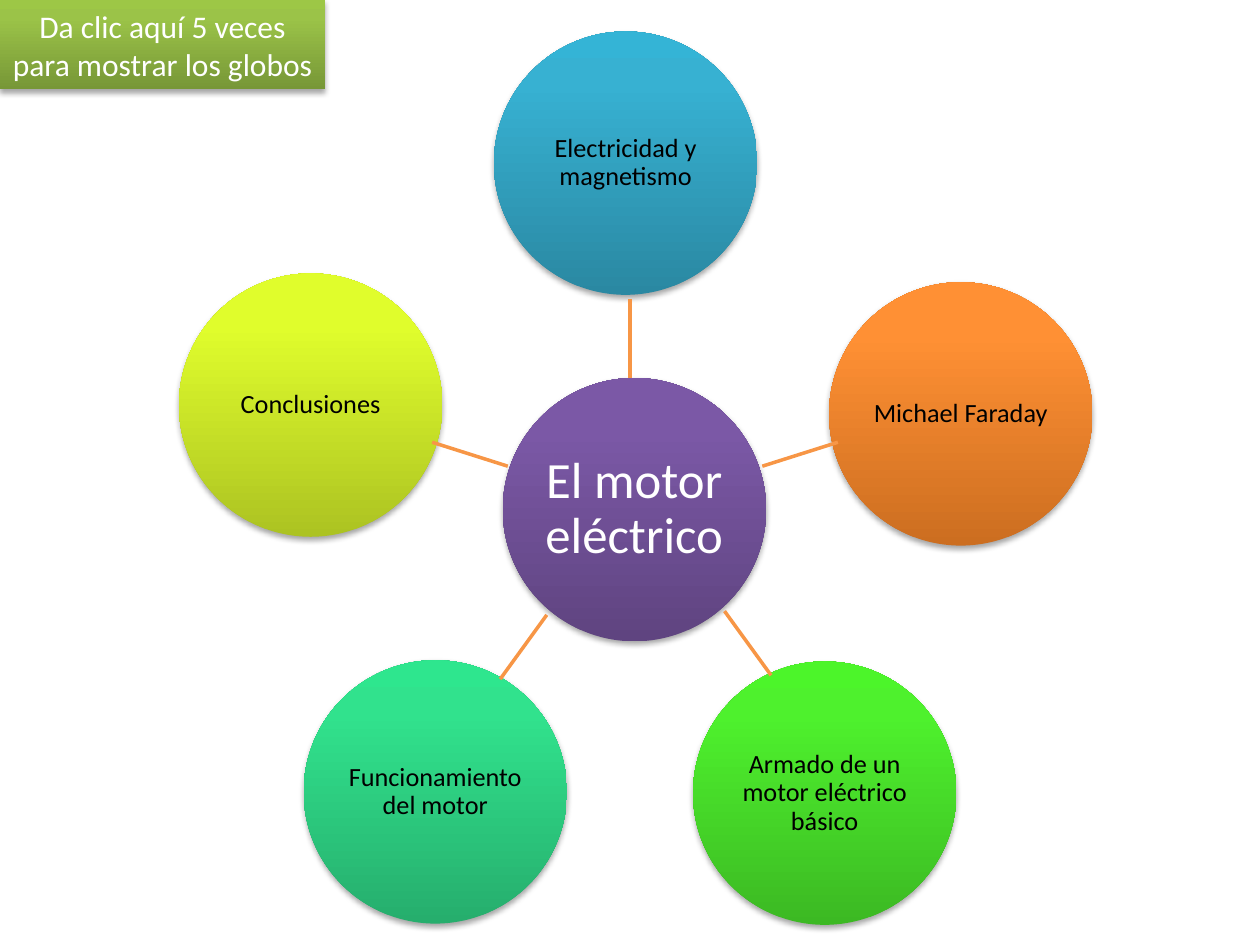
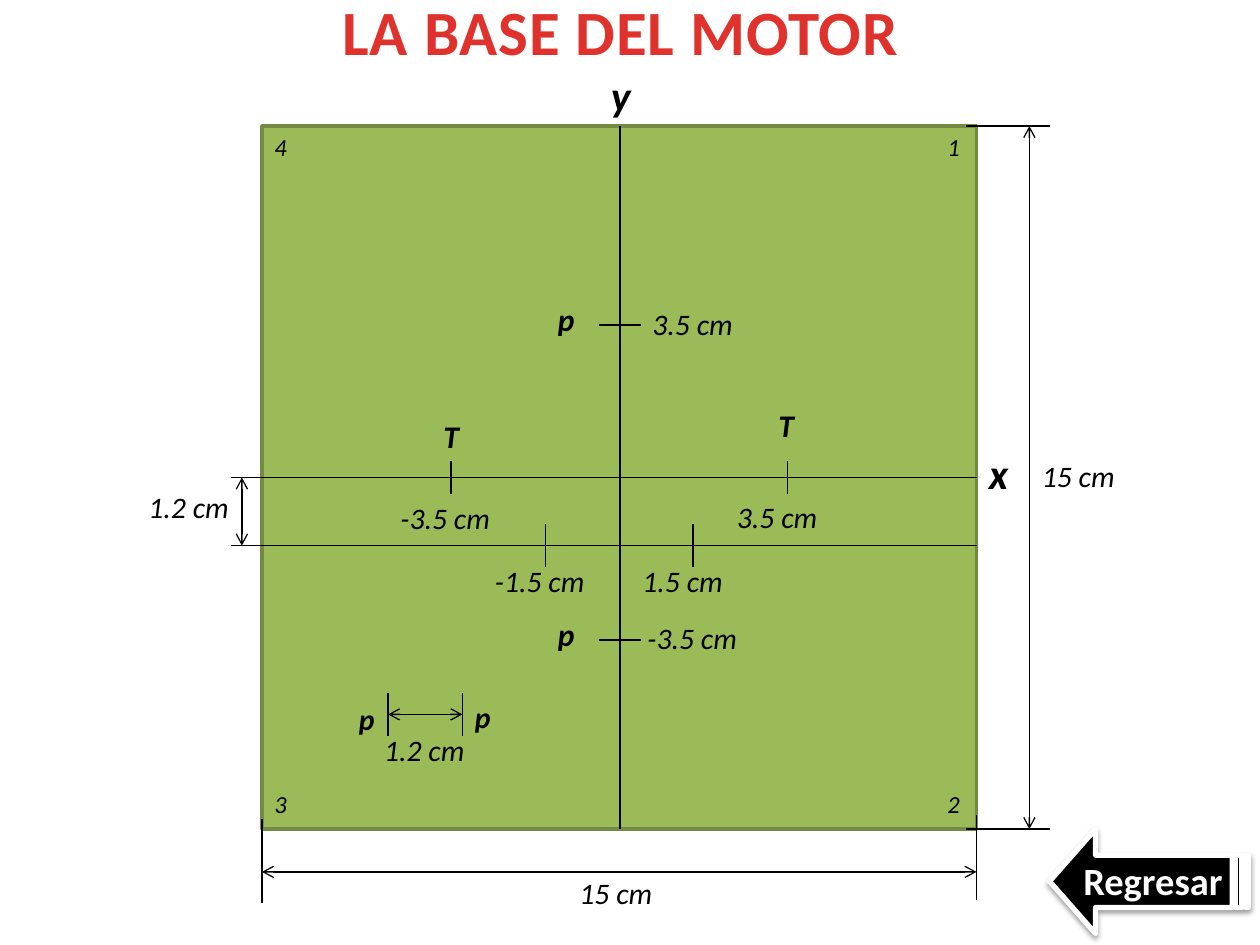
"""Build a topic map of the electric motor and a measured plan of its base."""
from typing import NamedTuple

from lxml import etree
from pptx import Presentation
from pptx import util as u
from pptx.dml import color as c
from pptx.enum import shapes, text
from pptx.oxml import ns

PX = 9144
FONT = "Calibri"
BLACK, WHITE, RED = "000000", "FFFFFF", "E0322D"
ORANGE, GREEN, OLIVE = "F79646", "9BBB59", "738A42"
DISC = 209
LEFT, TOP, RIGHT, BASE = 208, 100, 775, 658
MID, AXIS, LOWER = 492, 379, 433


class Face(NamedTuple):
    size: int
    tint: str = BLACK
    bold: bool = False
    slant: bool = False


class Globe(NamedTuple):
    words: str
    x: int
    y: int
    tones: tuple[str, str, str]
    face: Face = Face(15)


class Line(NamedTuple):
    x1: int
    y1: int
    x2: int
    y2: int
    arrow: bool = False
    tint: str = BLACK
    width: float = 0.75


class Label(NamedTuple):
    words: str
    x: int
    y: int
    w: int
    h: int
    face: Face


AXES = Face(24, bold=True, slant=True)
HOLE = Face(18, bold=True, slant=True)
SMALL = Face(17, bold=True, slant=True)
SIZE = Face(17, slant=True)
CORNER = Face(14, slant=True)

GLOBES = [
    Globe("Michael Faraday", 658, 224, ("CC6E20", "FF9034", "FF9136")),
    Globe("Electricidad y magnetismo", 392, 25, ("2A88A2", "37B1D2", "34B4D6")),
    Globe("El motor eléctrico", 399, 300, ("5F4480", "7B58A6", "7C57A8"), Face(29, WHITE)),
    Globe("Funcionamiento del motor", 241, 524, ("26AE6D", "31E28D", "2EE68E")),
    Globe("Armado de un motor eléctrico básico", 550, 525, ("3CB923", "4EF12D", "4CF52A")),
    Globe("Conclusiones", 142, 217, ("ACC322", "E0FD2C", "E2FF2B")),
]
SPOKES = [
    (500, 300, 500, 237), (403, 370, 343, 351), (605, 370, 665, 351),
    (434, 488, 397, 539), (575, 485, 612, 536),
]


def across(x: int, y: int) -> Line:
    """Return a short level tick centred on a point."""
    return Line(x - 17, y, x + 17, y)


def upright(x: int, y: int, half: int) -> Line:
    """Return a short upright tick centred on a point."""
    return Line(x, y - half, x, y + half)


LINES = [
    Line(MID, TOP, MID, BASE),
    Line(183, AXIS, RIGHT, AXIS),
    Line(183, LOWER, RIGHT, LOWER),
    *(across(MID, y) for y in (258, 508)),
    *(upright(x, AXIS, 13) for x in (358, 625)),
    *(upright(x, LOWER, 17) for x in (433, 550)),
    *(upright(x, 567, 17) for x in (308, 367)),
    Line(367, 567, 308, 567, True),
    Line(192, AXIS, 192, LOWER, True),
    Line(817, TOP, 817, BASE, True),
    *(Line(767, y, 833, y) for y in (TOP, BASE)),
    Line(RIGHT, 692, LEFT, 692, True),
    Line(LEFT, 650, LEFT, 717),
    Line(RIGHT, 647, RIGHT, 714),
]
LABELS = [
    Label("y", 475, 50, 33, 50, AXES),
    Label("x", 775, 350, 33, 50, AXES),
    *(Label(words, x, y, 33, 34, CORNER) for words, x, y in (
        ("1", 742, 100), ("4", 208, 100), ("3", 208, 621), ("2", 742, 621))),
    *(Label(words, x, y, 33, 40, HOLE) for words, x, y in (
        ("p", 433, 233), ("p", 433, 483), ("T", 342, 326), ("T", 608, 317))),
    *(Label("p", x, y, 33, 39, SMALL) for x, y in ((275, 551), (367, 550))),
    *(Label(words, x, y, 100, 39, SIZE) for words, x, y in (
        ("3.5 cm", 508, 238), ("3.5 cm", 575, 391), ("-3.5 cm", 504, 487),
        ("-3.5 cm", 308, 392), ("1.5 cm", 500, 442), ("-1.5 cm", 383, 442),
        ("1.2 cm", 108, 383), ("1.2 cm", 295, 576),
        ("15 cm", 817, 358), ("15 cm", 450, 689))),
]


def px(*lengths: int) -> list[int]:
    """Turn px lengths into EMU."""
    return [length * PX for length in lengths]


def paint(target, tint: str) -> None:
    """Give a fill one solid colour."""
    target.solid()
    target.fore_color.rgb = c.RGBColor.from_string(tint)


def add(parent, tag: str, **traits):
    """Append a DrawingML child and return it."""
    return etree.SubElement(parent, ns.qn("a:" + tag), traits)


def blend(shape, tones: tuple[str, str, str]) -> None:
    """Fill a shape with tones that run from its foot to its top."""
    props = shape._element.spPr
    grad = add(props, "gradFill", rotWithShape="1")
    stops = add(grad, "gsLst")
    for place, tone in zip((0, 80, 100), tones):
        add(add(stops, "gs", pos=str(place * 1000)), "srgbClr", val=tone)
    add(grad, "lin", ang="16200000", scaled="0")
    props.insert(2, grad)
    shape.line.fill.background()


def shade(shape, depth: int) -> None:
    """Cast a soft shadow below a shape."""
    shape.shadow.inherit = False
    effects = shape._element.spPr.find(ns.qn("a:effectLst"))
    cast = add(effects, "outerShdw", blurRad="40000", dist="23000",
               dir="5400000", rotWithShape="0")
    add(add(cast, "srgbClr", val=BLACK), "alpha", val=str(depth * 1000))


def write(shape, words: str, face: Face, align=text.PP_ALIGN.LEFT, pitch: float = 1.0) -> None:
    """Write one run of text in a shape."""
    frame = shape.text_frame
    frame.word_wrap = True
    para = frame.paragraphs[0]
    para.alignment = align
    para.line_spacing = pitch
    run = para.add_run()
    run.text = words
    font = run.font
    font.name, font.size = FONT, u.Pt(face.size)
    font.bold, font.italic = face.bold, face.slant
    paint(font.fill, face.tint)


def label(slide, item: Label, align=text.PP_ALIGN.LEFT):
    """Place a text box and return it."""
    box = slide.shapes.add_textbox(*px(item.x, item.y, item.w, item.h))
    write(box, item.words, item.face, align)
    return box


def globe(slide, item: Globe) -> None:
    """Draw a shaded disc with its topic."""
    disc = slide.shapes.add_shape(shapes.MSO_SHAPE.OVAL, *px(item.x, item.y, DISC, DISC))
    blend(disc, item.tones)
    shade(disc, 35)
    frame = disc.text_frame
    frame.margin_left = frame.margin_right = frame.margin_top = frame.margin_bottom = PX
    frame.vertical_anchor = text.MSO_ANCHOR.MIDDLE
    write(disc, item.words, item.face, text.PP_ALIGN.CENTER, 0.9)


def stroke(slide, item: Line) -> None:
    """Draw a line, with open arrows at both ends if asked."""
    link = slide.shapes.add_connector(
        shapes.MSO_CONNECTOR.STRAIGHT, *px(item.x1, item.y1, item.x2, item.y2))
    paint(link.line.fill, item.tint)
    link.line.width = u.Pt(item.width)
    if item.arrow:
        for tag in ("headEnd", "tailEnd"):
            add(link.line._get_or_add_ln(), tag, type="arrow")
    add(link._element.spPr, "effectLst")


def topics(slide) -> None:
    """Draw the map of topics."""
    for item in GLOBES:
        globe(slide, item)
    for ends in SPOKES:
        stroke(slide, Line(*ends, tint=ORANGE, width=2))
    hint = slide.shapes.add_shape(shapes.MSO_SHAPE.RECTANGLE, *px(0, 0, 258, 71))
    blend(hint, ("779737", "9BC348", "9DC746"))
    shade(hint, 35)
    write(hint, "Da clic aquí 5 veces para mostrar los globos", Face(18, WHITE),
          text.PP_ALIGN.CENTER)


def button(slide) -> None:
    """Draw the striped arrow that leads back."""
    arrow = slide.shapes.add_shape(
        shapes.MSO_SHAPE.STRIPED_RIGHT_ARROW, *px(833, 658, 158, 83))
    arrow.adjustments[0], arrow.adjustments[1] = 0.5, 0.44
    arrow._element.spPr.find(ns.qn("a:xfrm")).set("flipH", "1")
    paint(arrow.fill, BLACK)
    paint(arrow.line.fill, WHITE)
    arrow.line.width = u.Pt(3)
    shade(arrow, 38)
    label(slide, Label("Regresar", 850, 675, 133, 52, Face(22, WHITE, True)))


def plan(slide) -> None:
    """Draw the plan of the base with its sizes."""
    title = label(slide, Label("LA BASE DEL MOTOR", 259, -11, 467, 71, Face(36, RED, True)),
                  text.PP_ALIGN.CENTER)
    title.text_frame.word_wrap = False
    title.text_frame.paragraphs[0].runs[0].font._element.set("spc", "50")
    board = slide.shapes.add_shape(
        shapes.MSO_SHAPE.RECTANGLE, *px(LEFT, TOP, RIGHT - LEFT, BASE - TOP))
    board.shadow.inherit = False
    paint(board.fill, GREEN)
    paint(board.line.fill, OLIVE)
    board.line.width = u.Pt(2)
    for item in LINES:
        stroke(slide, item)
    for item in LABELS:
        label(slide, item)
    button(slide)


def main() -> None:
    """Build both slides and save them."""
    deck = Presentation()
    deck.slide_width, deck.slide_height = px(1000, 750)
    for draw in (topics, plan):
        draw(deck.slides.add_slide(deck.slide_layouts[6]))
    deck.save("out.pptx")


if __name__ == "__main__":
    main()
